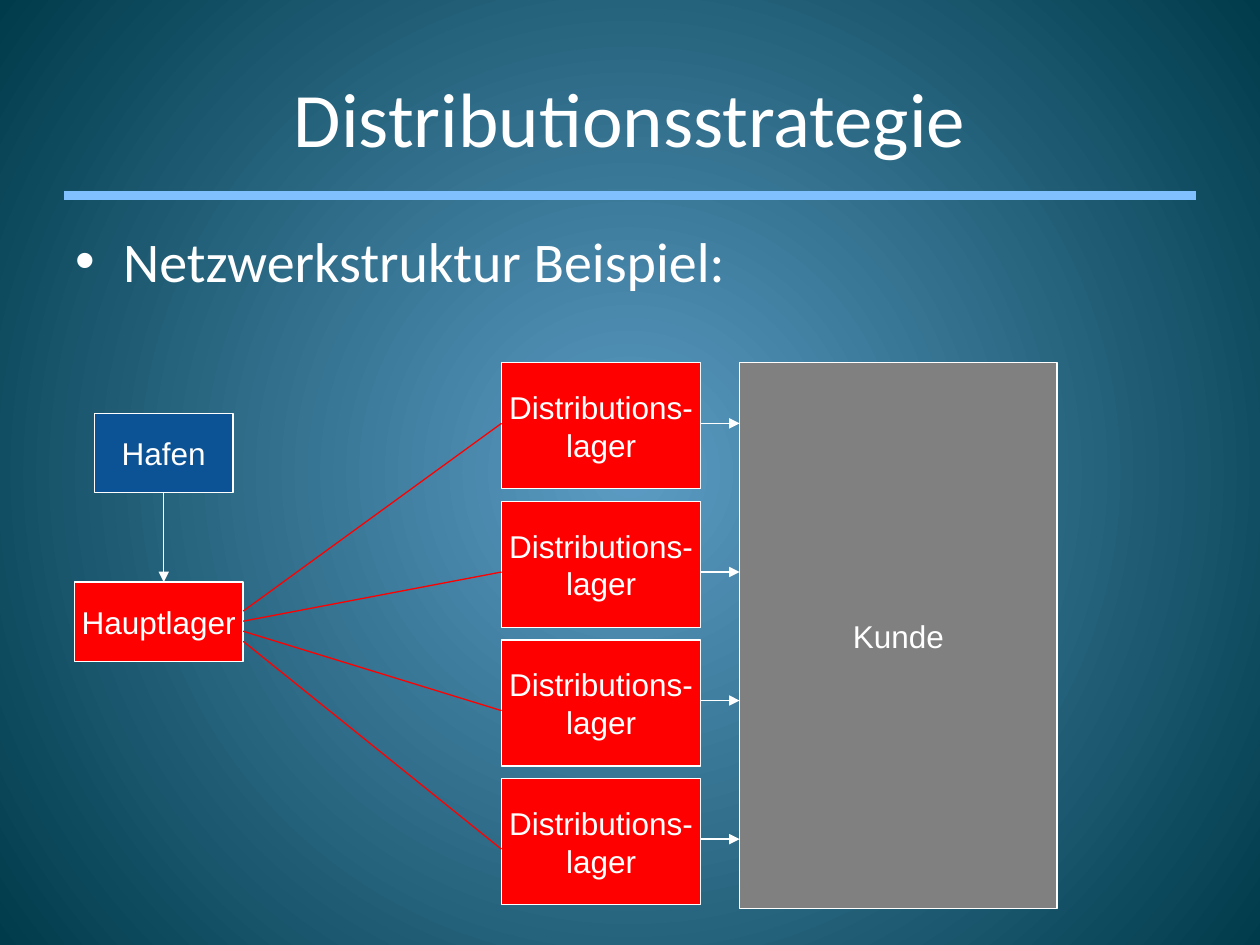
from pptx import Presentation
from pptx.dml.color import RGBColor
from pptx.enum.shapes import MSO_CONNECTOR, MSO_SHAPE
from pptx.enum.text import MSO_ANCHOR, PP_ALIGN
from pptx.oxml import parse_xml
from pptx.oxml.ns import qn
from pptx.util import Inches, Pt
from lxml.etree import SubElement

WHITE = RGBColor(0xFF, 0xFF, 0xFF)
RED = RGBColor(0xFF, 0x00, 0x00)
GRAY = RGBColor(0x80, 0x80, 0x80)
NAVY = RGBColor(0x0B, 0x53, 0x94)
SKY = RGBColor(0x80, 0xC0, 0xFF)

GLOW = """<a:gradFill xmlns:a="http://schemas.openxmlformats.org/drawingml/2006/main"
 rotWithShape="1"><a:gsLst>
<a:gs pos="0"><a:srgbClr val="5C9CC4"/></a:gs>
<a:gs pos="100000"><a:srgbClr val="003B4B"/></a:gs>
</a:gsLst><a:path path="circle">
<a:fillToRect l="50000" t="50000" r="50000" b="50000"/></a:path></a:gradFill>"""


def paint_back(slide):
    """Fill the background with a radial gradient."""
    slide.background.fill.solid()
    solid = slide.element.find(".//" + qn("p:bgPr")).find(qn("a:solidFill"))
    solid.getparent().replace(solid, parse_xml(GLOW))


def style_text(frame, font, size, align):
    """Format every paragraph and run of a text frame."""
    for para in frame.paragraphs:
        para.alignment = align
        for run in para.runs:
            run.font.name = font
            run.font.size = Pt(size)
            run.font.color.rgb = WHITE


def add_line(slide, start, end, color, width=0.75, arrow=False):
    """Draw a straight line, with an arrowhead at its end if asked."""
    points = [Inches(value) for value in (*start, *end)]
    line = slide.shapes.add_connector(MSO_CONNECTOR.STRAIGHT, *points)
    line.line.color.rgb = color
    line.line.width = Pt(width)
    if arrow:
        SubElement(line.line._get_or_add_ln(), qn("a:tailEnd"), type="triangle")
    SubElement(line._element.spPr, qn("a:effectLst"))


def add_box(slide, box, text, color):
    """Draw a filled rectangle with a centred label."""
    shape = slide.shapes.add_shape(MSO_SHAPE.RECTANGLE, *map(Inches, box))
    shape.shadow.inherit = False
    shape.fill.solid()
    shape.fill.fore_color.rgb = color
    shape.line.color.rgb = WHITE
    shape.line.width = Pt(0.75)
    frame = shape.text_frame
    frame.text = text
    frame.word_wrap = False
    frame.vertical_anchor = MSO_ANCHOR.MIDDLE
    style_text(frame, "Arial", 18, PP_ALIGN.CENTER)


def add_title(slide, box, text):
    """Place the title and the rule below it."""
    left, top, width, height = box
    title = slide.shapes.title
    title.left, title.top, title.width, title.height = map(Inches, box)
    title.text_frame.text = text
    title.text_frame.vertical_anchor = MSO_ANCHOR.MIDDLE
    style_text(title.text_frame, "Calibri", 44, PP_ALIGN.CENTER)
    base = top + height
    add_line(slide, (left + 0.01, base), (left + width - 0.01, base), SKY, 5)


def add_bullet(slide, box, text):
    """Place the bulleted line."""
    frame = slide.shapes.add_textbox(*map(Inches, box)).text_frame
    frame.word_wrap = True
    frame.text = text
    para = frame.paragraphs[0]
    para.space_before = Pt(6.4)
    style_text(frame, "Calibri", 32, PP_ALIGN.LEFT)
    props = para._p.get_or_add_pPr()
    props.set("marL", str(Inches(0.38)))
    props.set("indent", str(-Inches(0.38)))
    SubElement(props, qn("a:buFont"), typeface="Arial")
    SubElement(props, qn("a:buChar"), char="•")


def add_network(slide, box):
    """Draw the flow from port to main store, depots and customer."""
    left, top, width, height = box
    main = left + 1.34
    depot = left + 3.39
    edge = depot + 1.58
    client = left + 5.28
    add_box(slide, (left, top + 1.74, 1.34, 0.63), "Hauptlager", RED)
    hubs = (0.48, 1.66, 2.76, 3.86)
    exits = (0.48, 1.66, 2.68, 3.78)
    for row, (hub, out) in enumerate(zip(hubs, exits)):
        spot = (depot, top + row * 1.1, 1.58, 1)
        add_box(slide, spot, "Distributions-\nlager", RED)
        start = (main, top + 1.97 + row * 0.08)
        add_line(slide, start, (depot, top + hub), RED)
        add_line(slide, (edge, top + out), (client, top + out), WHITE, arrow=True)
    add_box(slide, (client, top, left + width - client, height), "Kunde", GRAY)
    mid = left + 0.71
    add_line(slide, (mid, top + 1.03), (mid, top + 1.74), WHITE, arrow=True)
    add_box(slide, (mid - 0.55, top + 0.4, 1.1, 0.63), "Hafen", NAVY)


def main():
    """Build the slide and save it."""
    deck = Presentation()
    deck.slide_width, deck.slide_height = Inches(10), Inches(7.5)
    slide = deck.slides.add_slide(deck.slide_layouts[5])
    paint_back(slide)
    add_title(slide, (0.5, 0.3, 9, 1.25), "Distributionsstrategie")
    add_bullet(slide, (0.5, 1.75, 9, 0.82), "Netzwerkstruktur Beispiel:")
    add_network(slide, (0.59, 2.88, 7.8, 4.33))
    deck.save("out.pptx")


if __name__ == "__main__":
    main()
